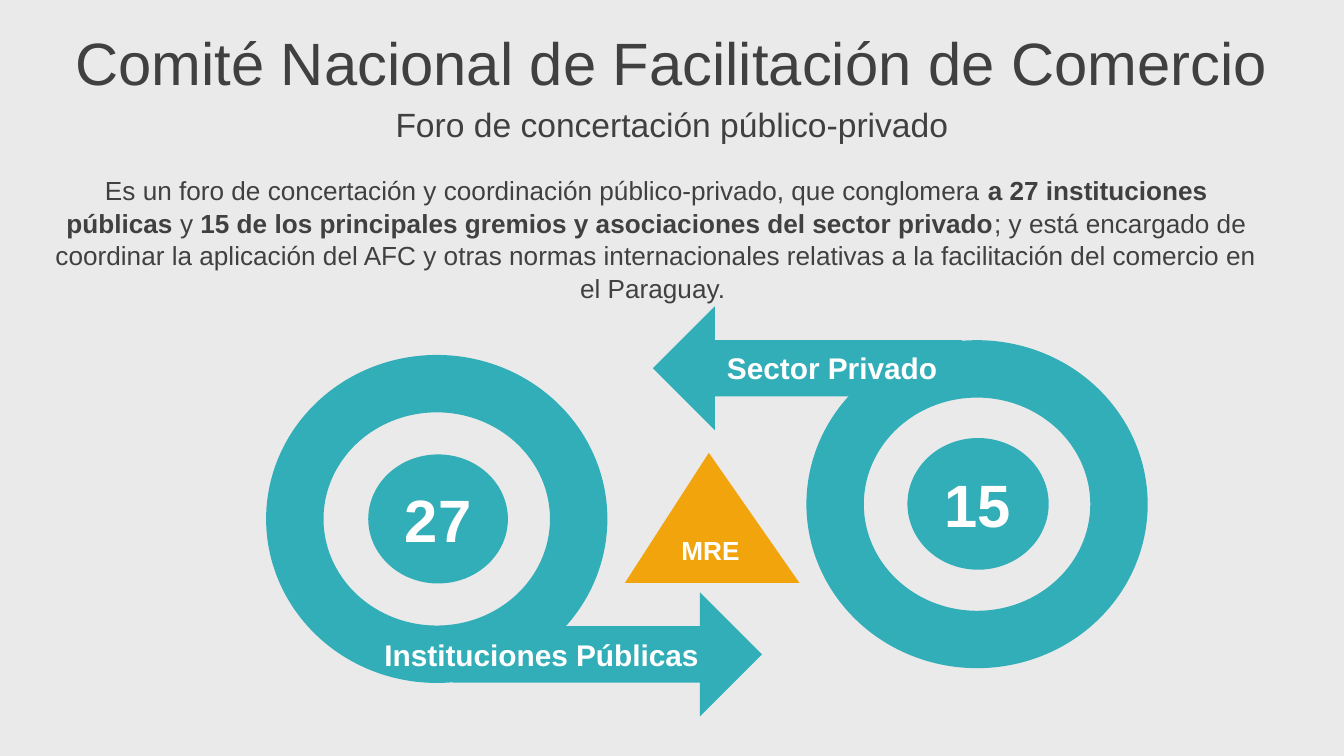
from pptx import Presentation
from pptx.dml.color import RGBColor
from pptx.enum.shapes import MSO_SHAPE
from pptx.enum.text import MSO_ANCHOR, PP_ALIGN
from pptx.util import Cm, Pt

GREY = RGBColor(0xEA, 0xEA, 0xEA)
DARK = RGBColor(0x40, 0x40, 0x40)
TEAL = RGBColor(0x32, 0xAE, 0xB8)
AMBER = RGBColor(0xF2, 0xA4, 0x0D)
WHITE = RGBColor(0xFF, 0xFF, 0xFF)

deck = Presentation()
deck.slide_width, deck.slide_height = Cm(25.4), Cm(14.29)
slide = deck.slides.add_slide(deck.slide_layouts[6])
slide.background.fill.solid()
slide.background.fill.fore_color.rgb = GREY


def write(shape, runs, size, color, bold=None, align=PP_ALIGN.CENTER,
          anchor=MSO_ANCHOR.MIDDLE):
    """Fill the first paragraph with (text, bold) runs and return it."""
    frame = shape.text_frame
    frame.word_wrap = True
    frame.vertical_anchor = anchor
    para = frame.paragraphs[0]
    para.alignment = align
    font = para.font
    font.name, font.size, font.bold = "Arial", Pt(size), bold
    font.color.rgb = color
    for text, strong in runs:
        run = para.add_run()
        run.text = text
        if strong:
            run.font.bold = True
    return para


def draw(kind, box, color, turn=0):
    shape = slide.shapes.add_shape(kind, *map(Cm, box))
    shape.shadow.inherit = False
    shape.fill.solid()
    shape.fill.fore_color.rgb = color
    shape.line.fill.background()
    shape.rotation = turn
    return shape


# Headings
for text, top, height, size in [
    ("Comité Nacional de Facilitación de Comercio", 0.36, 1.6, 32),
    ("Foro de concertación público-privado", 1.96, 0.79, 18),
]:
    box = slide.shapes.add_textbox(0, Cm(top), deck.slide_width, Cm(height))
    write(box, [(text, False)], size, DARK)

# Ring, arrow and count for each sector
for ring, arrow, disc, count, turn in [
    ((5.03, 6.71), (8.56, 11.2), (6.96, 8.59, 2.64, 2.44), "27", 0),
    ((15.24, 6.43), (12.34, 5.79), (17.15, 8.28, 2.67, 2.49), "15", 180),
]:
    donut = draw(MSO_SHAPE.DONUT, (*ring, 6.45, 6.2), TEAL, turn)
    donut.adjustments[0] = 0.175
    pointer = draw(MSO_SHAPE.RIGHT_ARROW, (*arrow, 5.84, 2.34), TEAL, turn)
    pointer.adjustments[0] = 0.455
    hub = draw(MSO_SHAPE.OVAL, disc, TEAL)
    hub.text_frame.margin_left = hub.text_frame.margin_right = 0
    write(hub, [(count, False)], 32, WHITE, bold=True)

# Ministry in the middle
peak = draw(MSO_SHAPE.ISOSCELES_TRIANGLE, (11.81, 8.56, 3.3, 2.46), AMBER)
peak.adjustments[0] = 0.481
peak.text_frame.margin_left = peak.text_frame.margin_right = 0
write(peak, [("MRE", False)], 14, WHITE, bold=True)

# Description
box = slide.shapes.add_textbox(Cm(0.71), Cm(3.15), Cm(23.39), Cm(2.06))
body = write(box, [
    ("Es un foro de concertación y coordinación público-privado, "
     "que conglomera ", False),
    ("a 27 instituciones públicas ", True),
    ("y ", False),
    ("15 de los principales gremios y asociaciones del sector privado", True),
    ("; y está encargado de coordinar la aplicación del AFC y otras normas "
     "internacionales relativas a la facilitación del comercio en "
     "el Paraguay. ", False),
], 14, DARK, anchor=MSO_ANCHOR.TOP)
body.line_spacing = 1.04

# Arrow labels
for text, place, align in [
    ("Instituciones Públicas", (6.55, 11.91, 6.91, 0.94), PP_ALIGN.RIGHT),
    ("Sector Privado", (13.49, 6.48, 5.31, 0.94), PP_ALIGN.LEFT),
]:
    label = slide.shapes.add_textbox(*map(Cm, place))
    write(label, [(text, False)], 16, WHITE, bold=True, align=align,
          anchor=MSO_ANCHOR.TOP)

deck.save("out.pptx")
